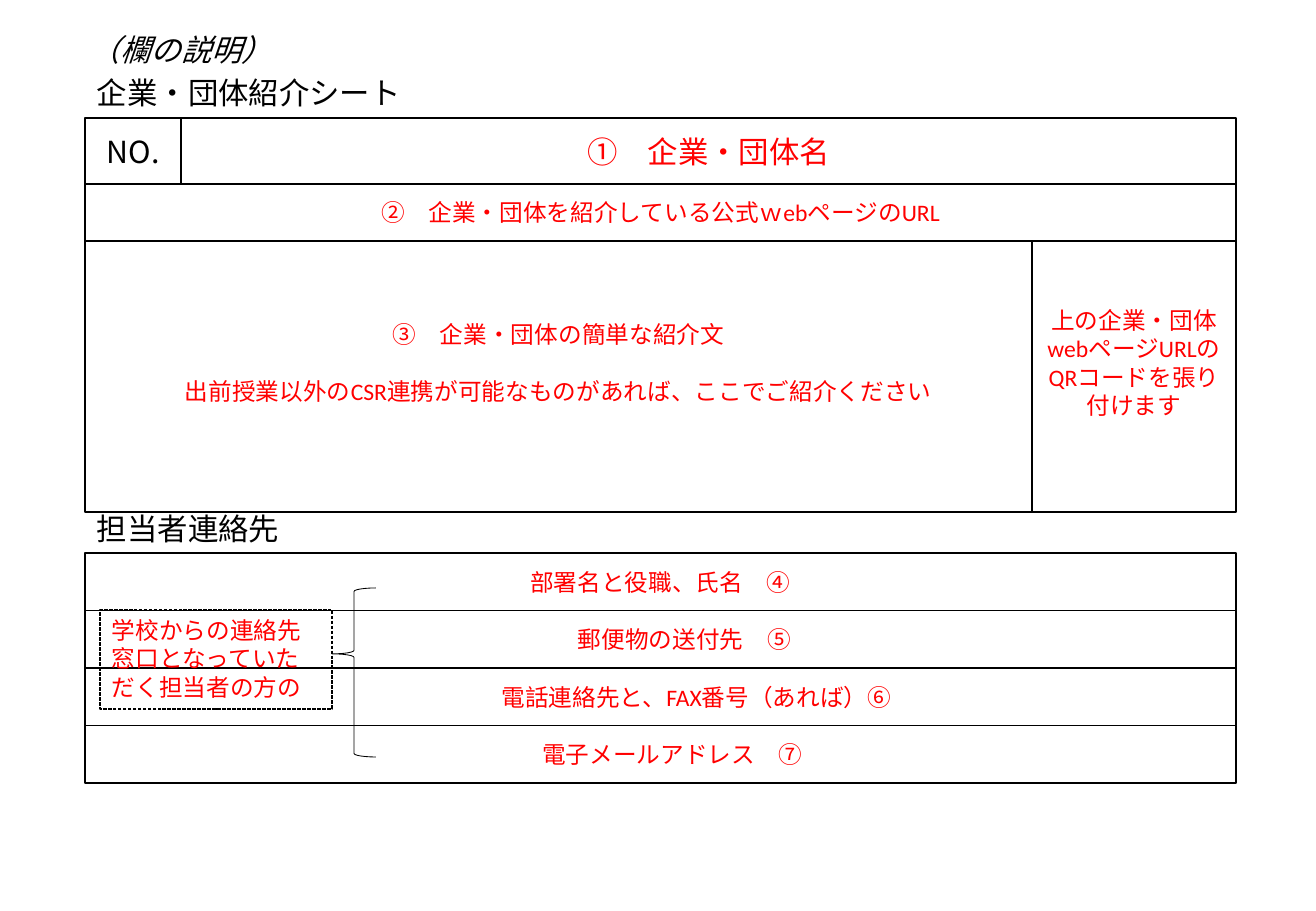
import pptx
import pptx.dml.color
import pptx.enum.dml
import pptx.enum.shapes
import pptx.enum.text
import pptx.util
from lxml import etree

BLACK, RED = "000000", "FF0000"
CJK, LATIN = "Noto Sans CJK JP", "Calibri"
PX = 914400 / 121.5
LINE = 28   # height of one 14 pt line
INDENT = 24  # width of one 14 pt character

# Content: left, top, width, height, text
headings = [
    (85, 68, 767, 49, "企業・団体紹介シート", False),
    (85, 504, 407, 49, "担当者連絡先", False),
    (78, 25, 272, 49, "（欄の説明）", True),
]
# Sheet cells: box, paragraphs, size, font, colour, space below
sheet_cells = [
    ((85, 118, 96, 66), ["NO."], 18, CJK, BLACK, 0),
    ((181, 118, 1055, 66), ["①　企業・団体名"], 18, LATIN, RED, 0),
    ((85, 184, 1151, 57), ["②　企業・団体を紹介しているï½—ebページのURL".replace("ï½—", "公式ｗ")], 14, LATIN, RED, 0),
    ((1032, 241, 204, 271), ["上の企業・団体webページURLのQRコードを張り付けます"], 14, LATIN, RED, LINE),
    ((85, 241, 947, 271), ["③　企業・団体の簡単な紹介文",
                           "出前授業以外のCSR連携が可能なものがあれば、ここでご紹介ください"],
     14, LATIN, RED, LINE),
]
# Contact rows: text, indent in characters
contact_rows = [
    ("部署名と役職、氏名　④", 0),
    ("郵便物の送付先　⑤", 2),
    ("電話連絡先と、FAX番号（あれば）⑥", 3),
    ("電子メールアドレス　⑦", 1),
]
contact_left, contact_top, contact_width, contact_pitch = 85, 553, 1151, 57.5
brace_box = (332, 588, 44, 169)
note_box = (100, 610, 232, 99)
note_text = "学校からの連絡先窓口となっていただく担当者の方の"


def emu(px):
    return pptx.util.Emu(round(px * PX))


def rgb(value):
    return pptx.dml.color.RGBColor.from_string(value)


def write(shape, lines, size, face, colour, centred=True, italic=None):
    frame = shape.text_frame
    frame.word_wrap = True
    frame.text = "\n".join(lines)
    for index, paragraph in enumerate(frame.paragraphs):
        align = pptx.enum.text.PP_ALIGN
        paragraph.alignment = align.CENTER if centred else align.LEFT
        if index:
            paragraph.space_before = pptx.util.Pt(17)
        font = paragraph.font
        font.size, font.name, font.italic = pptx.util.Pt(size), face, italic
        font.color.rgb = rgb(colour)


def outlined(kind, box, weight):
    shape = slide.shapes.add_shape(kind, *map(emu, box))
    shape.shadow.inherit = False
    shape.fill.background()
    shape.line.color.rgb = rgb(BLACK)
    shape.line.width = pptx.util.Pt(weight)
    return shape


def cell(box, lines, size, face, colour, below=0, indent=0):
    shape = outlined(RECTANGLE, box, 1)
    write(shape, lines, size, face, colour)
    frame = shape.text_frame
    frame.vertical_anchor = pptx.enum.text.MSO_ANCHOR.MIDDLE
    frame.margin_left = emu(12 + indent * INDENT)
    frame.margin_bottom = emu(6 + below)


RECTANGLE = pptx.enum.shapes.MSO_SHAPE.RECTANGLE
deck = pptx.Presentation()
deck.slide_width, deck.slide_height = emu(1316), emu(911)
slide = deck.slides.add_slide(deck.slide_layouts[6])

# Introduction sheet
for box, lines, size, face, colour, below in sheet_cells:
    cell(box, lines, size, face, colour, below)

# Headings
for *box, text, italic in headings:
    heading = slide.shapes.add_textbox(*map(emu, box))
    write(heading, [text], 18, CJK, BLACK, centred=False, italic=italic)

# Contact rows
for row, (text, indent) in enumerate(contact_rows):
    box = (contact_left, contact_top + row * contact_pitch, contact_width, contact_pitch)
    cell(box, [text], 14, LATIN, RED, indent=indent)

# Brace and note
brace = outlined(pptx.enum.shapes.MSO_SHAPE.LEFT_BRACE, brace_box, 0.5)
brace.adjustments[0], brace.adjustments[1] = 0.08, 0.39
note = outlined(RECTANGLE, note_box, 0.75)
note.line.dash_style = pptx.enum.dml.MSO_LINE.SQUARE_DOT
note.text_frame.vertical_anchor = pptx.enum.text.MSO_ANCHOR.TOP
write(note, [note_text], 14, LATIN, RED, centred=False)

deck.save("out.pptx")
